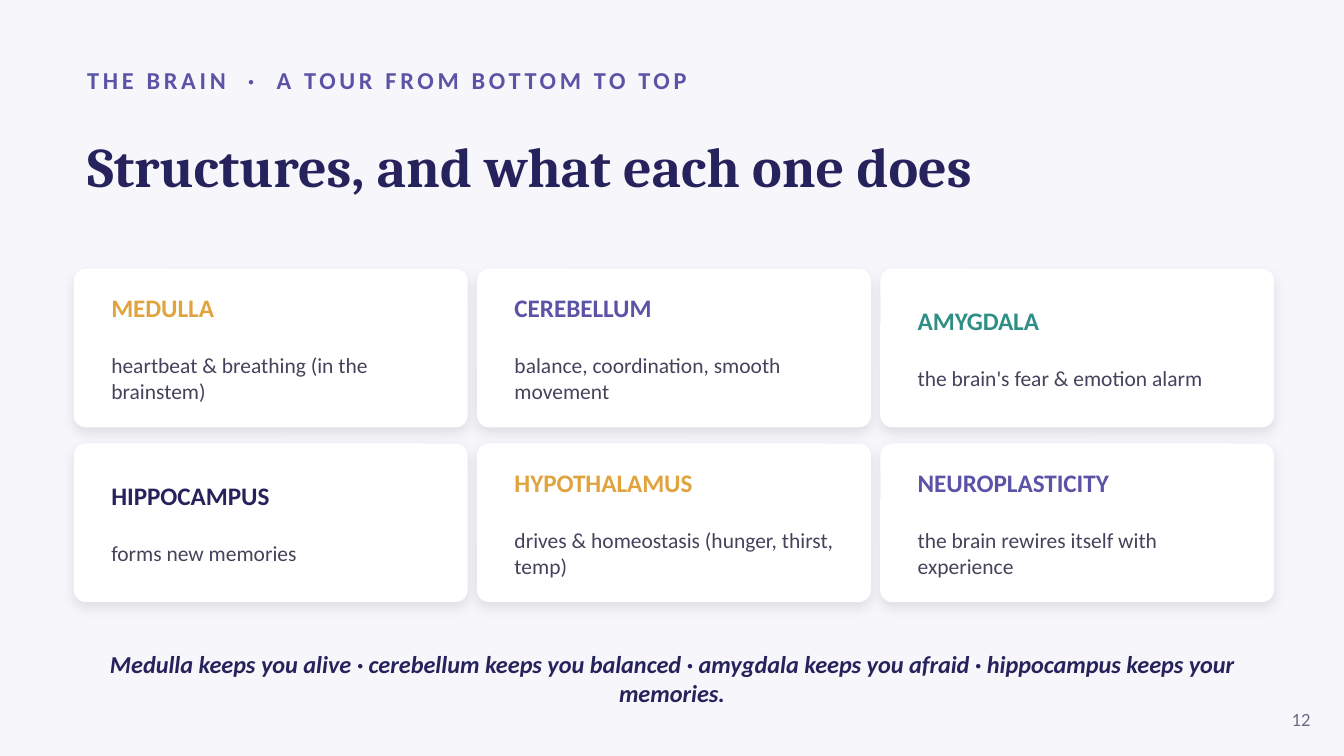
from lxml.etree import SubElement
from pptx import Presentation
from pptx.dml.color import RGBColor
from pptx.enum.shapes import MSO_SHAPE as Preset
from pptx.enum.text import MSO_ANCHOR as Anchor, MSO_AUTO_SIZE as AutoSize, PP_ALIGN as Align
from pptx.oxml.ns import qn
from pptx.util import Inches, Pt

NAVY, VIOLET, GOLD, TEAL = "26235C", "5B53A6", "E0A33E", "2F8F86"
INK, GREY, WHITE, PAPER = "44435C", "6B6A86", "FFFFFF", "F7F7FB"
ACCENTS = [GOLD, VIOLET, TEAL, NAVY]
STRUCTURES = [
    ("MEDULLA", "heartbeat & breathing (in the brainstem)"),
    ("CEREBELLUM", "balance, coordination, smooth movement"),
    ("AMYGDALA", "the brain's fear & emotion alarm"),
    ("HIPPOCAMPUS", "forms new memories"),
    ("HYPOTHALAMUS", "drives & homeostasis (hunger, thirst, temp)"),
    ("NEUROPLASTICITY", "the brain rewires itself with experience"),
]
COLUMNS = 3
LEFT, TOP = 0.55, 2
STEP_X, STEP_Y = 3, 1.3
CARD_W, CARD_H = 2.93, 1.18
PAD_X, PAD_Y = 0.18, 0.12


def paint(color_target, color):
    """Give a fill or font a solid colour from a hex string."""
    color_target.rgb = RGBColor.from_string(color)


def write(paragraph, text, size, color, font="Calibri", bold=False, italic=False,
          align=Align.LEFT, spacing=None, after=0):
    """Write one formatted run into a paragraph."""
    paragraph.alignment = align
    paragraph.space_after = Pt(after)
    run = paragraph.add_run()
    run.text = text
    run.font.name, run.font.size = font, Pt(size)
    run.font.bold, run.font.italic = bold, italic
    paint(run.font.color, color)
    if spacing:
        run.font._element.set("spc", str(spacing * 100))


def prepare(frame):
    """Make a text frame wrap, keep its size and centre vertically."""
    frame.word_wrap = True
    frame.auto_size = AutoSize.NONE
    frame.vertical_anchor = Anchor.MIDDLE
    return frame


def add_text_frame(slide, left, top, width, height):
    """Add a text box and return its text frame."""
    box = slide.shapes.add_textbox(Inches(left), Inches(top), Inches(width), Inches(height))
    return prepare(box.text_frame)


def add_title(slide, text):
    """Place and fill the title placeholder."""
    title = slide.shapes.title
    title.left, title.top = Inches(LEFT), Inches(0.78)
    title.width, title.height = Inches(8.9), Inches(0.9)
    write(prepare(title.text_frame).paragraphs[0], text, 30, NAVY, font="Cambria", bold=True)


def add_soft_shadow(shape):
    """Add a faint shadow that falls straight down."""
    shape.shadow.inherit = False
    effects = shape._element.spPr.find(qn("a:effectLst"))
    shadow = SubElement(effects, qn("a:outerShdw"), blurRad=str(Pt(7)), dist=str(Pt(3)),
                        dir=str(90 * 60000), algn="bl", rotWithShape="0")
    tint = SubElement(shadow, qn("a:srgbClr"), val="000000")
    SubElement(tint, qn("a:alpha"), val="10000")


def add_card(slide, left, top, structure, role, accent):
    """Add a white rounded card with a structure and its role."""
    card = slide.shapes.add_shape(Preset.ROUNDED_RECTANGLE, Inches(left), Inches(top),
                                  Inches(CARD_W), Inches(CARD_H))
    card.adjustments[0] = 0.076
    card.fill.solid()
    paint(card.fill.fore_color, WHITE)
    card.line.fill.background()
    add_soft_shadow(card)
    frame = add_text_frame(slide, left + PAD_X, top + PAD_Y,
                           CARD_W - 2 * PAD_X, CARD_H - 2 * PAD_Y)
    write(frame.paragraphs[0], structure, 13.5, accent, bold=True, after=16)
    write(frame.add_paragraph(), role, 11.5, INK)


def main():
    """Build the slide and save it."""
    deck = Presentation()
    deck.slide_width = Inches(10)
    deck.slide_height = deck.slide_width * 9 // 16
    slide = deck.slides.add_slide(deck.slide_layouts[5])
    slide.background.fill.solid()
    paint(slide.background.fill.fore_color, PAPER)

    kicker = add_text_frame(slide, LEFT, 0.42, 9, 0.35)
    write(kicker.paragraphs[0], "THE BRAIN  ·  A TOUR FROM BOTTOM TO TOP", 13, VIOLET,
          bold=True, spacing=2)
    add_title(slide, "Structures, and what each one does")

    for index, (structure, role) in enumerate(STRUCTURES):
        row, column = divmod(index, COLUMNS)
        add_card(slide, LEFT + column * STEP_X, TOP + row * STEP_Y, structure, role,
                 ACCENTS[index % len(ACCENTS)])

    summary = add_text_frame(slide, LEFT, 4.85, 8.9, 0.4)
    write(summary.paragraphs[0],
          "Medulla keeps you alive · cerebellum keeps you balanced · "
          "amygdala keeps you afraid · hippocampus keeps your memories.",
          13, NAVY, bold=True, italic=True, align=Align.CENTER)
    page_number = add_text_frame(slide, 9.35, 5.2, 0.5, 0.3)
    write(page_number.paragraphs[0], "12", 10, GREY, align=Align.RIGHT)
    deck.save("out.pptx")


if __name__ == "__main__":
    main()
